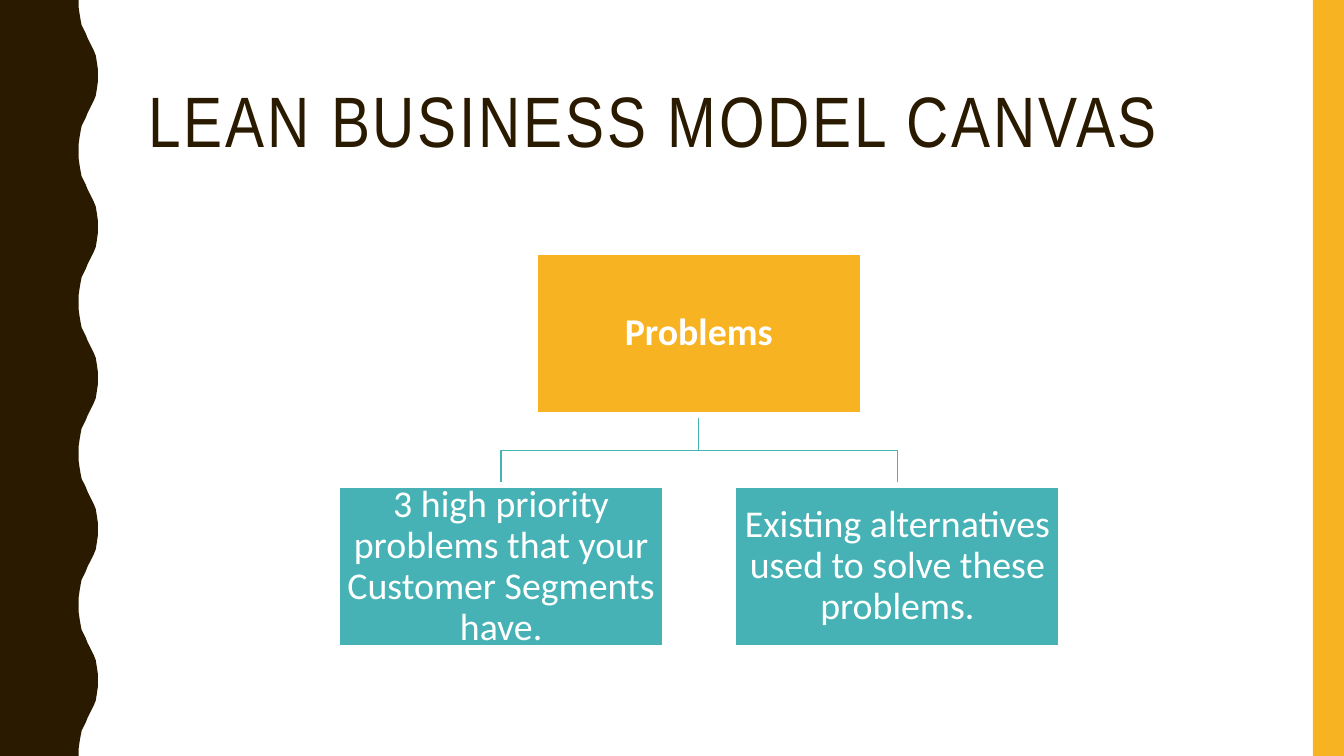
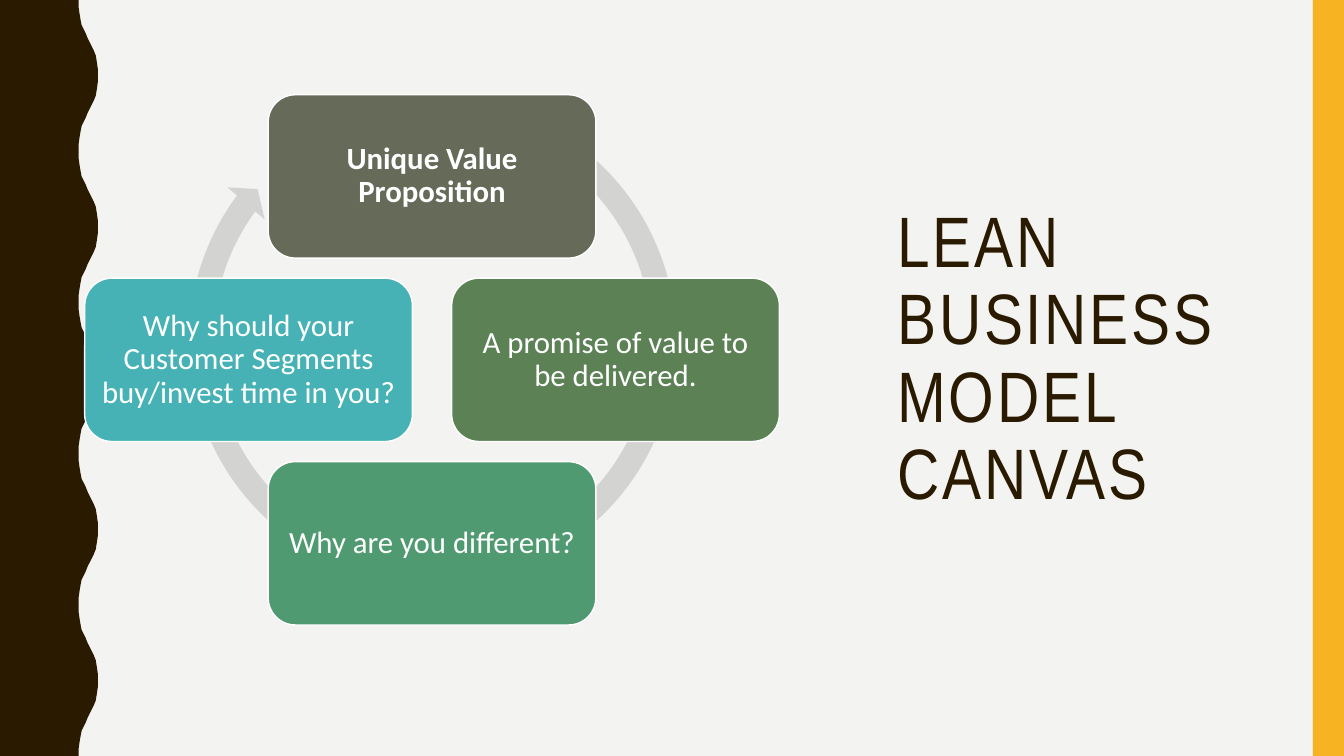
from dataclasses import dataclass

from pptx import Presentation
from pptx.dml.color import RGBColor as RGB
from pptx.enum.shapes import MSO_SHAPE as SHAPE
from pptx.enum.text import MSO_ANCHOR as ANCHOR, MSO_AUTO_SIZE as FIT, PP_ALIGN as ALIGN
from pptx.util import Inches, Pt


@dataclass(frozen=True)
class Theme:
    brown: RGB = RGB.from_string("2A1A00")
    amber: RGB = RGB.from_string("F8B323")
    teal: RGB = RGB.from_string("46B2B5")
    olive: RGB = RGB.from_string("656A59")
    moss: RGB = RGB.from_string("5B8155")
    green: RGB = RGB.from_string("4F9A70")
    ring: RGB = RGB.from_string("D3D4D1")
    white: RGB = RGB.from_string("FFFFFF")
    mist: RGB = RGB.from_string("F3F3F2")
    title_font: str = "Arial Narrow"
    body_font: str = "Calibri"
    title_size: Pt = Pt(51)
    tree_size: Pt = Pt(27)
    cycle_size: Pt = Pt(22)


theme = Theme()
BOX_W, BOX_H = 3.25, 1.62

prs = Presentation()
prs.slide_width, prs.slide_height = Inches(13.33), Inches(7.5)
title_only = prs.slide_layouts[5]


def add_titled_slide(background, left, top, width, height):
    slide = prs.slides.add_slide(title_only)
    slide.background.fill.solid()
    slide.background.fill.fore_color.rgb = background
    title = slide.shapes.title
    title.left, title.top = Inches(left), Inches(top)
    title.width, title.height = Inches(width), Inches(height)
    frame = title.text_frame
    frame.text = "LEAN BUSINESS MODEL CANVAS"
    frame.auto_size = FIT.NONE
    frame.vertical_anchor = ANCHOR.MIDDLE
    heading = frame.paragraphs[0]
    heading.alignment = ALIGN.LEFT
    heading.line_spacing = 0.9
    run = heading.runs[0]
    run.font.name, run.font.size = theme.title_font, theme.title_size
    run.font.color.rgb = theme.brown
    run.font.bold = False
    run.font._element.set("spc", "200")
    return slide


def add_box(slide, kind, left, top, text, fill, size, border, inset, bold):
    box = slide.shapes.add_shape(kind, Inches(left), Inches(top), Inches(BOX_W), Inches(BOX_H))
    box.shadow.inherit = False
    box.fill.solid()
    box.fill.fore_color.rgb = fill
    box.line.color.rgb = theme.white
    box.line.width = Pt(border)
    frame = box.text_frame
    frame.text = text
    frame.word_wrap = True
    frame.vertical_anchor = ANCHOR.MIDDLE
    frame.margin_left = frame.margin_right = Inches(inset)
    frame.margin_top = frame.margin_bottom = Inches(inset)
    label = frame.paragraphs[0]
    label.alignment = ALIGN.CENTER
    label.line_spacing = 0.9
    font = label.runs[0].font
    font.name, font.size, font.bold = theme.body_font, size, bold
    font.color.rgb = theme.white


# Slide 1: problem tree
tree = add_titled_slide(theme.white, 1.37, 0.42, 11.13, 1.63)

# Wavy left band and right stripe, kept in the shared layout
half_wave = [(0.78, 0), (0.78, 0.07), (0.79, 0.14), (0.8, 0.2), (0.81, 0.25),
             (0.83, 0.29), (0.85, 0.33), (0.87, 0.38), (0.89, 0.42), (0.91, 0.46),
             (0.93, 0.5), (0.95, 0.55), (0.96, 0.61), (0.97, 0.68), (0.97, 0.75)]
period = 1.5
full_wave = half_wave + [(x, period - y) for x, y in reversed(half_wave[:-1])]
edge = [(x, y + period * turn) for turn in range(5) for x, y in full_wave]
outline = tree.shapes.build_freeform(0, 0, scale=1.0)
outline.add_line_segments([(Inches(x), Inches(y)) for x, y in edge + [(0, 7.5)]], close=True)
wave_band = outline.convert_to_shape()
stripe = tree.shapes.add_shape(SHAPE.RECTANGLE, Inches(13.02), 0, Inches(0.31), Inches(7.5))
for order, (band, color) in enumerate([(wave_band, theme.brown), (stripe, theme.amber)]):
    band.shadow.inherit = False
    band.fill.solid()
    band.fill.fore_color.rgb = color
    band.line.fill.background()
    band.element.nvSpPr.cNvPr.set("id", str(100 + order))
    title_only.shapes.element.insert(2 + order, band.element)

# Branches: one bent line from the root to each leaf
root_x, root_top, leaf_top = 6.93, 2.5, 4.81
left_x, right_x = 4.97, 8.9
root_bottom, bend_y = root_top + BOX_H, 4.47
for leaf_x in (right_x, left_x):
    bends = [(root_x, bend_y), (leaf_x, bend_y), (leaf_x, leaf_top)]
    route = tree.shapes.build_freeform(Inches(root_x), Inches(root_bottom), scale=1.0)
    route.add_line_segments([(Inches(x), Inches(y)) for x, y in bends], close=False)
    branch = route.convert_to_shape()
    branch.shadow.inherit = False
    branch.fill.background()
    branch.line.color.rgb = theme.teal
    branch.line.width = Pt(1)

# Root and leaves, centred on their branch ends
for center_x, top, text, fill in [
    (root_x, root_top, "Problems", theme.amber),
    (left_x, leaf_top, "3 high priority problems that your Customer Segments have.", theme.teal),
    (right_x, leaf_top, "Existing alternatives used to solve these problems.", theme.teal),
]:
    add_box(tree, SHAPE.RECTANGLE, center_x - BOX_W / 2, top, text, fill,
            theme.tree_size, border=4, inset=0.02, bold=top == root_top)

# Slide 2: value proposition cycle
cycle = add_titled_slide(theme.mist, 8.8, 0.53, 4, 6.09)

# Ring arrow behind the boxes
ring = cycle.shapes.add_shape(SHAPE.CIRCULAR_ARROW, Inches(1.75), Inches(0.84),
                              Inches(5.08), Inches(5.08))
for index, value in enumerate([0.047, 2.729, 129.824, 179.287, 0.048]):
    ring.adjustments[index] = value
ring.shadow.inherit = False
ring.fill.solid()
ring.fill.fore_color.rgb = theme.ring
ring.line.fill.background()

# Four boxes, one step from the hub in each direction, clockwise from the top
hub_left, hub_top, step = 2.66, 2.76, 1.82
for across, down, text, fill in [
    (0, -1, "Unique Value Proposition", theme.olive),
    (1, 0, "A promise of value to be delivered.", theme.moss),
    (0, 1, "Why are you different?", theme.green),
    (-1, 0, "Why should your Customer Segments buy/invest time in you?", theme.teal),
]:
    add_box(cycle, SHAPE.ROUNDED_RECTANGLE, hub_left + across * step, hub_top + down * step,
            text, fill, theme.cycle_size, border=1, inset=0.09, bold=down == -1)

prs.save("out.pptx")
